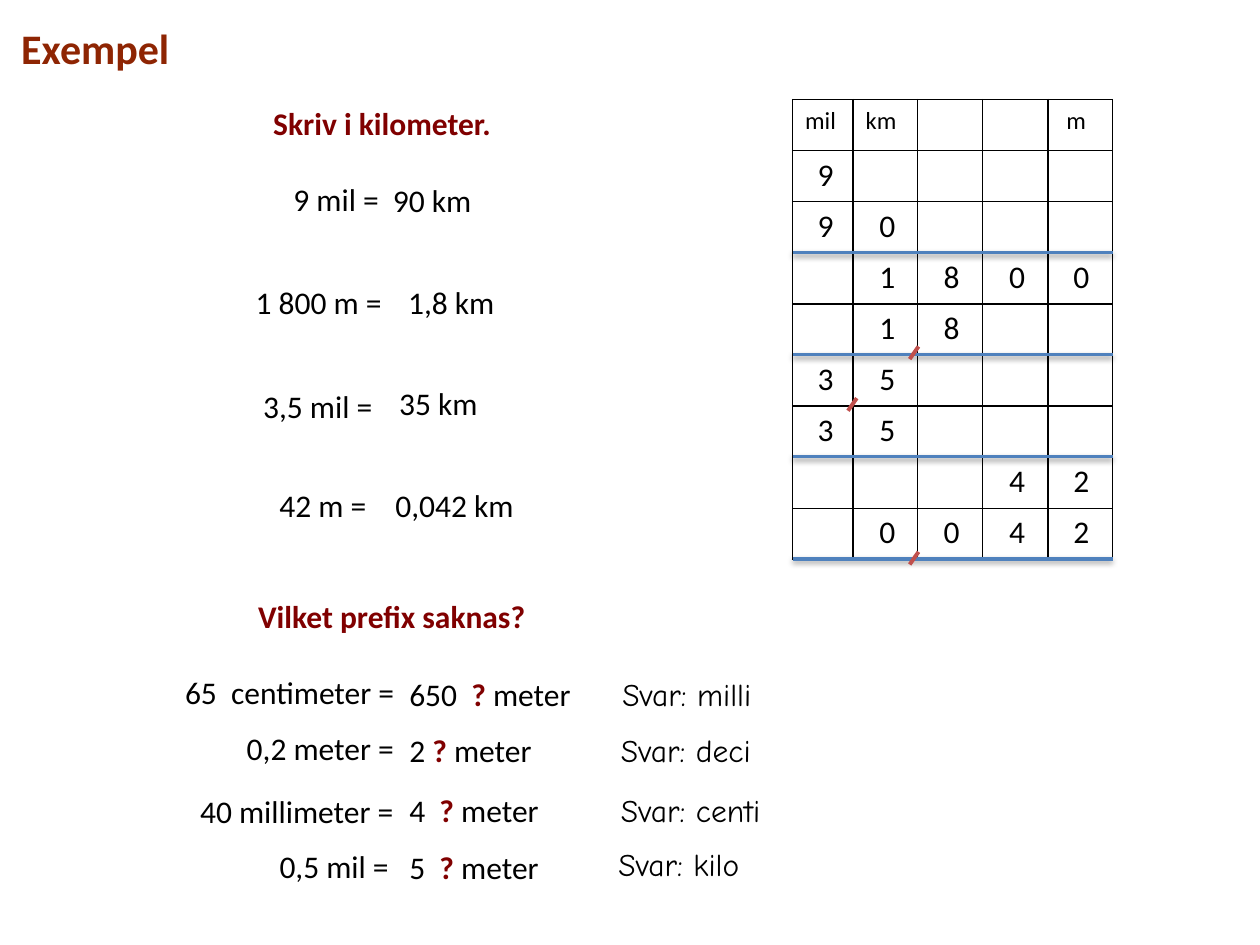
from lxml import etree
from pptx import Presentation
from pptx.dml.color import RGBColor
from pptx.enum.shapes import MSO_CONNECTOR
from pptx.enum.text import MSO_AUTO_SIZE
from pptx.oxml import parse_xml
from pptx.oxml.ns import nsdecls, qn
from pptx.util import Inches, Pt

BLACK = RGBColor(0x00, 0x00, 0x00)
WHITE = RGBColor(0xFF, 0xFF, 0xFF)
MAROON = RGBColor(0x80, 0x00, 0x00)
RUST = RGBColor(0x8E, 0x25, 0x03)
BLUE = RGBColor(0x4F, 0x81, 0xBD)
RED = RGBColor(0xC0, 0x50, 0x4D)

TABLE_LEFT, TABLE_TOP, ROW_H = 6.29, 0.79, 0.405
COL_WIDTHS = [0.48, 0.51, 0.52, 0.52, 0.51]
HEADERS = ["mil", "km", "", "", " m"]
DIGIT_LEFTS = [6.39, 6.88, 7.39, 7.91, 8.42]
DIGIT_ROWS = ["9", "90", " 1800", " 18", "35", "35", "   42", " 0042"]
RULE_ROWS = [3, 5, 7, 9]
COMMAS = [(7.29, 2.75), (6.8, 3.16), (7.29, 4.38)]

# left, top, width, text
EQUATIONS = [
    (2.23, 1.38, 0.89, "9 mil ="), (3.02, 1.39, 0.83, "90 km"),
    (1.93, 2.2, 1.21, "1 800 m ="), (3.14, 2.2, 0.89, "1,8 km"),
    (1.99, 3.02, 1.08, "3,5 mil ="), (3.07, 3.0, 0.83, "35 km"),
    (2.12, 3.81, 0.9, "42 m ="), (3.04, 3.81, 1.15, "0,042 km"),
    (1.37, 5.29, 1.91, "65  centimeter ="),
    (1.86, 5.74, 1.39, "0,2 meter ="),
    (1.49, 6.24, 1.76, "40 millimeter ="),
    (2.12, 6.67, 1.08, "0,5 mil ="),
]
# top, width, text before and after the question mark, answer left, answer
PREFIXES = [
    (5.31, 1.5, "650  ", " meter", 4.84, "milli"),
    (5.75, 1.19, "2 ", " meter", 4.83, "deci"),
    (6.23, 1.24, "4  ", " meter", 4.83, "centi"),
    (6.68, 1.24, "5  ", " meter", 4.81, "kilo"),
]


class Sheet:
    font, size = "Calibri", 18

    def __init__(self, slide):
        self.s = slide

    def run(self, p, text, size=None, color=BLACK, bold=False, font=None):
        r = p.add_run()
        r.text = text
        r.font.name = font or self.font
        r.font.size = Pt(size or self.size)
        r.font.bold = bold
        r.font.color.rgb = color

    def text(self, left, top, width, *parts, height=0.4, wrap=False, **style):
        """Add a text box; each part is a string or a (string, style) pair."""
        box = self.s.shapes.add_textbox(
            Inches(left), Inches(top), Inches(width), Inches(height))
        tf = box.text_frame
        tf.word_wrap = wrap
        tf.auto_size = MSO_AUTO_SIZE.SHAPE_TO_FIT_TEXT
        for part in parts:
            words, own = (part, {}) if isinstance(part, str) else part
            self.run(tf.paragraphs[0], words, **{**style, **own})

    def line(self, x1, y1, x2, y2, color, width, shadow=False):
        c = self.s.shapes.add_connector(
            MSO_CONNECTOR.STRAIGHT,
            Inches(x1), Inches(y1), Inches(x2), Inches(y2))
        c.line.color.rgb = color
        c.line.width = Pt(width)
        sp_pr = c._element.spPr
        effects = etree.SubElement(sp_pr, qn("a:effectLst"))
        if shadow:
            effects.append(parse_xml(
                f'<a:outerShdw {nsdecls("a")} blurRad="40000" dist="20000" '
                'dir="5400000" rotWithShape="0"><a:srgbClr val="000000">'
                '<a:alpha val="38000"/></a:srgbClr></a:outerShdw>'))

    def borders(self, cell):
        tc_pr = cell._tc.get_or_add_tcPr()
        for i, side in enumerate(("lnL", "lnR", "lnT", "lnB")):
            tc_pr.insert(i, parse_xml(
                f'<a:{side} {nsdecls("a")} w="12700"><a:solidFill>'
                f'<a:srgbClr val="{BLACK}"/></a:solidFill></a:{side}>'))

    def table(self, left, top, widths, row_h, rows, headers):
        t = self.s.shapes.add_table(
            rows, len(widths), Inches(left), Inches(top),
            Inches(sum(widths)), Inches(row_h * rows)).table
        t.first_row = t.horz_banding = False
        for col, width in zip(t.columns, widths):
            col.width = Inches(width)
        for row in t.rows:
            row.height = Inches(row_h)
            for cell in row.cells:
                cell.fill.solid()
                cell.fill.fore_color.rgb = WHITE
                self.borders(cell)
        for cell, name in zip(t.rows[0].cells, headers):
            if name:
                self.run(cell.text_frame.paragraphs[0], name, size=14)


def main():
    prs = Presentation()
    prs.slide_width, prs.slide_height = Inches(10), Inches(7.5)
    sheet = Sheet(prs.slides.add_slide(prs.slide_layouts[6]))

    sheet.table(TABLE_LEFT, TABLE_TOP, COL_WIDTHS, ROW_H,
                len(DIGIT_ROWS) + 1, HEADERS)
    table_right = TABLE_LEFT + sum(COL_WIDTHS)
    for row in RULE_ROWS:
        y = TABLE_TOP + row * ROW_H
        sheet.line(TABLE_LEFT, y, table_right, y, BLUE, 2, shadow=True)
    for i, digits in enumerate(DIGIT_ROWS):
        for left, digit in zip(DIGIT_LEFTS, digits):
            if digit != " ":
                sheet.text(left, 1.18 + i * ROW_H, 0.29, digit, wrap=True)
    for x, y in COMMAS:
        sheet.line(x, y, x - 0.07, y + 0.1, RED, 2.25)

    sheet.text(0.07, 0.13, 1.39, "Exempel", height=0.5,
               size=24, color=RUST, bold=True)
    sheet.text(2.07, 0.78, 1.97, "Skriv i kilometer.", color=MAROON, bold=True)
    sheet.text(1.95, 4.69, 2.75, "Vilket prefix saknas?", wrap=True,
               color=MAROON, bold=True)
    for equation in EQUATIONS:
        sheet.text(*equation)
    for top, width, before, after, left, answer in PREFIXES:
        sheet.text(3.15, top, width, before,
                   ("?", {"color": MAROON, "bold": True}), after)
        sheet.text(left, min(top, 6.66), 1.45, f"Svar: {answer}", wrap=True,
                   font="Comic Neue")

    prs.save("out.pptx")


if __name__ == "__main__":
    main()
